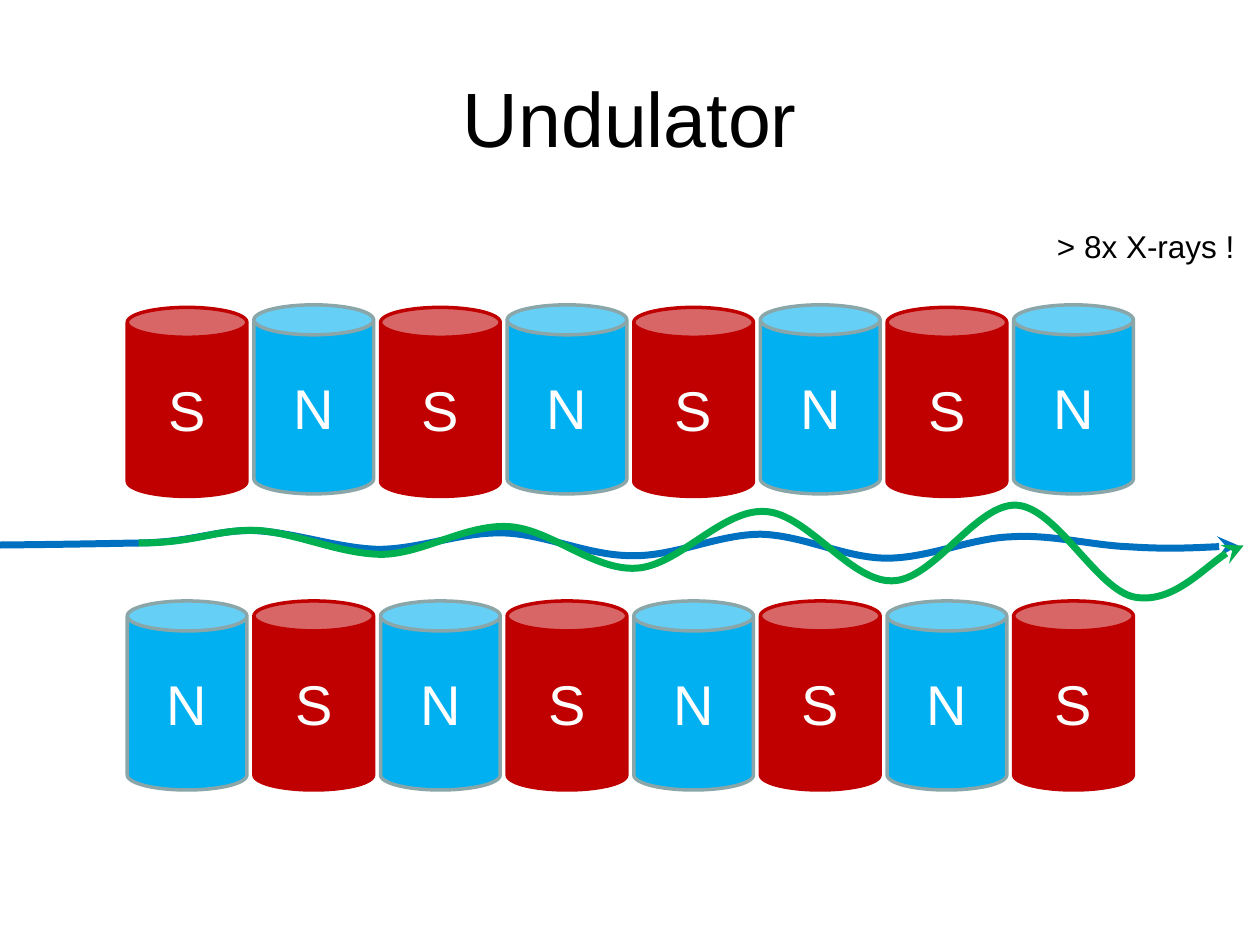
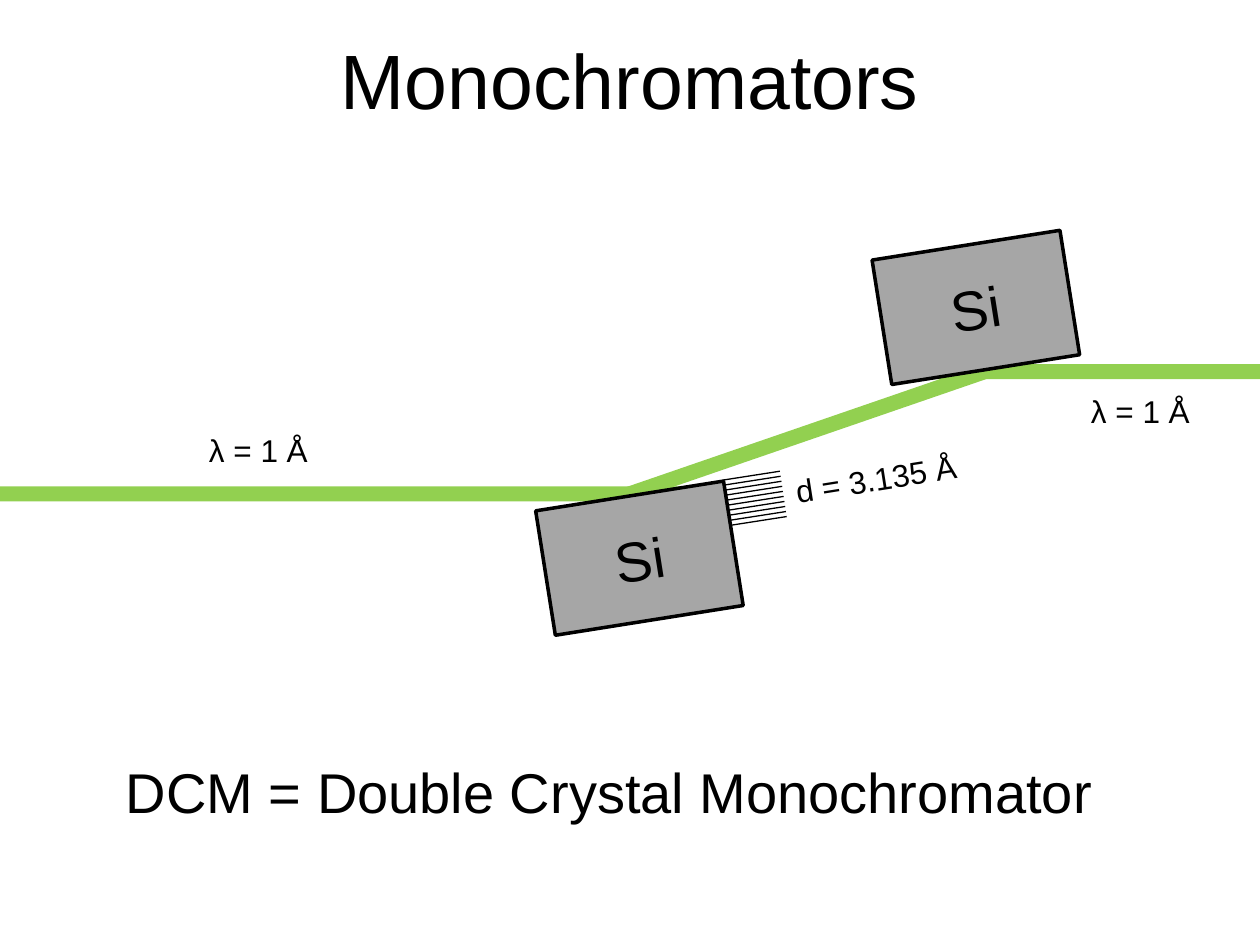
from lxml.etree import SubElement
from pptx import Presentation
from pptx.dml.color import RGBColor
from pptx.enum.shapes import MSO_CONNECTOR, MSO_SHAPE
from pptx.enum.text import MSO_ANCHOR, MSO_AUTO_SIZE, PP_ALIGN
from pptx.oxml.ns import qn
from pptx.util import Inches, Pt

FONT = "Arial"
COLORS = {
    "text": "000000",
    "magnet_text": "FFFFFF",
    "north": "00B0F0",
    "north_edge": "8AA6A8",
    "south": "C00000",
    "electrons": "0070C0",
    "xrays": "00B050",
    "beam": "92D050",
    "crystal": "A6A6A6",
}
TILT = 351  # degrees, shared by the crystals and the lattice label

# Each wave is a start point followed by (control, control, end) triples.
ELECTRON_WAVE = [
    (-0.77, 4.33),
    (-0.16, 4.33), (0.59, 4.32), (1.06, 4.31),
    (1.52, 4.31), (1.68, 4.21), (2, 4.21),
    (2.32, 4.22), (2.67, 4.35), (3, 4.36),
    (3.33, 4.36), (3.66, 4.22), (4, 4.23),
    (4.33, 4.24), (4.67, 4.41), (5.01, 4.41),
    (5.35, 4.42), (5.7, 4.24), (6.04, 4.24),
    (6.38, 4.25), (6.71, 4.43), (7.04, 4.43),
    (7.37, 4.43), (7.71, 4.27), (8.03, 4.26),
    (8.35, 4.24), (8.67, 4.33), (8.97, 4.34),
    (9.27, 4.36), (9.69, 4.34), (9.83, 4.33),
]
XRAY_WAVE = [
    (1.1, 4.31),
    (1.56, 4.31), (1.71, 4.2), (2.04, 4.21),
    (2.36, 4.23), (2.7, 4.4), (3.04, 4.4),
    (3.37, 4.39), (3.7, 4.16), (4.04, 4.18),
    (4.37, 4.2), (4.71, 4.53), (5.05, 4.51),
    (5.39, 4.49), (5.73, 4.04), (6.07, 4.06),
    (6.4, 4.07), (6.75, 4.62), (7.08, 4.61),
    (7.41, 4.61), (7.75, 3.99), (8.07, 4.01),
    (8.39, 4.03), (8.71, 4.69), (9.01, 4.74),
    (9.31, 4.79), (9.73, 4.33), (9.87, 4.33),
]


def rgb(name):
    return RGBColor.from_string(COLORS[name])


def write(shape, text, size=18, color="text", align=PP_ALIGN.CENTER,
          anchor=MSO_ANCHOR.MIDDLE, wrap=True):
    frame = shape.text_frame
    frame.word_wrap = wrap
    frame.vertical_anchor = anchor
    paragraph = frame.paragraphs[0]
    paragraph.alignment = align
    run = paragraph.add_run()
    run.text = text
    run.font.name = FONT
    run.font.size = Pt(size)
    run.font.color.rgb = rgb(color)


def add_title(slide, text, box):
    write(slide.shapes.add_textbox(*map(Inches, box)), text, size=44)


def add_label(shapes, text, box, size=18, rotation=0):
    label = shapes.add_textbox(*map(Inches, box))
    label.rotation = rotation
    write(label, text, size=size, align=PP_ALIGN.LEFT,
          anchor=MSO_ANCHOR.TOP, wrap=False)
    label.text_frame.auto_size = MSO_AUTO_SIZE.SHAPE_TO_FIT_TEXT


def add_solid(shapes, preset, box, fill, edge=None, rotation=0):
    solid = shapes.add_shape(preset, *map(Inches, box))
    solid.shadow.inherit = False
    solid.rotation = rotation
    solid.fill.solid()
    solid.fill.fore_color.rgb = rgb(fill)
    if edge:
        solid.line.color.rgb = rgb(edge)
        solid.line.width = Pt(2)
    else:
        solid.line.fill.background()
    return solid


def add_magnet_row(slide, poles, left, top, south_drop=0):
    """Place one can per letter; south poles sit south_drop lower."""
    row = slide.shapes.add_group_shape().shapes
    pitch, width, height = 1.005, 0.95, 1.5
    for i, pole in enumerate(poles):
        south = pole == "S"
        box = (left + i * pitch, top + south_drop * south, width, height)
        magnet = add_solid(row, MSO_SHAPE.CAN, box,
                           "south" if south else "north",
                           "south" if south else "north_edge")
        write(magnet, pole, size=32, color="magnet_text")


def add_wave(slide, points, color):
    """Draw a Bézier curve ending in an arrowhead."""
    start, *rest = [(Inches(x), Inches(y)) for x, y in points]
    builder = slide.shapes.build_freeform(*start)
    builder.add_line_segments(rest, close=False)
    wave = builder.convert_to_shape()
    wave.shadow.inherit = False
    wave.fill.background()
    wave.line.color.rgb = rgb(color)
    wave.line.width = Pt(4)
    SubElement(wave.line._get_or_add_ln(), qn("a:tailEnd"), type="stealth")

    outline = next(wave._element.iter(qn("a:path")))
    corners = outline.findall(qn("a:lnTo"))
    for i in range(0, len(corners), 3):
        curve = SubElement(outline, qn("a:cubicBezTo"))
        for corner in corners[i:i + 3]:
            curve.append(corner[0])
            outline.remove(corner)


def add_beam(slide, left, top, length, rotation=0):
    add_solid(slide.shapes, MSO_SHAPE.RECTANGLE, (left, top, length, 0.12),
              "beam", rotation=rotation)


def add_crystal(shapes, left, top):
    crystal = add_solid(shapes, MSO_SHAPE.RECTANGLE, (left, top, 1.51, 1),
                        "crystal", "text", TILT)
    write(crystal, "Si", size=32)


def add_lattice(shapes, left, top):
    """Draw the crystal planes, stepping down along the tilted side."""
    for i in range(10):
        x, y = left + 0.006 * i, top + 0.04 * i
        plane = shapes.add_connector(
            MSO_CONNECTOR.STRAIGHT,
            *map(Inches, (x + 0.45, y - 0.07, x, y)))
        plane.line.color.rgb = rgb("text")
        plane.line.width = Pt(0.75)
        SubElement(plane._element.spPr, qn("a:effectLst"))
    add_label(shapes, "d = 3.135 Å", (left + 0.47, top - 0.21, 1.5, 0.4),
              rotation=TILT)


def build_undulator(slide):
    add_title(slide, "Undulator", (0.5, 0.3, 9, 1.25))
    add_wave(slide, ELECTRON_WAVE, "electrons")
    add_magnet_row(slide, "NS" * 4, 1.01, 4.77)
    add_magnet_row(slide, "SN" * 4, 1.01, 2.42, south_drop=0.02)
    add_label(slide.shapes, "> 8x X-rays !", (8.29, 1.75, 1.63, 0.4))
    add_wave(slide, XRAY_WAVE, "xrays")


def build_monochromators(slide):
    add_beam(slide, 7.11, 2.89, 3.2)
    add_beam(slide, 0, 3.86, 5.69)
    add_beam(slide, 4.27, 3.36, 4.36, rotation=341)
    add_title(slide, "Monochromators", (0.75, 0, 8.5, 1.25))
    add_crystal(slide.shapes, 6.99, 1.94)
    for left, top in ((1.56, 3.37), (8.56, 3.06)):
        add_label(slide.shapes, "λ = 1 Å", (left, top, 1.02, 0.4))
    lower_crystal = slide.shapes.add_group_shape().shapes
    add_crystal(lower_crystal, 4.32, 3.93)
    add_lattice(lower_crystal, 5.74, 3.81)
    add_label(slide.shapes, "DCM = Double Crystal Monochromator",
              (0.9, 5.96, 7.94, 0.64), size=32)


def main():
    deck = Presentation()
    deck.slide_width, deck.slide_height = Inches(10), Inches(7.5)
    for build in (build_undulator, build_monochromators):
        build(deck.slides.add_slide(deck.slide_layouts[6]))
    deck.save("out.pptx")


if __name__ == "__main__":
    main()
